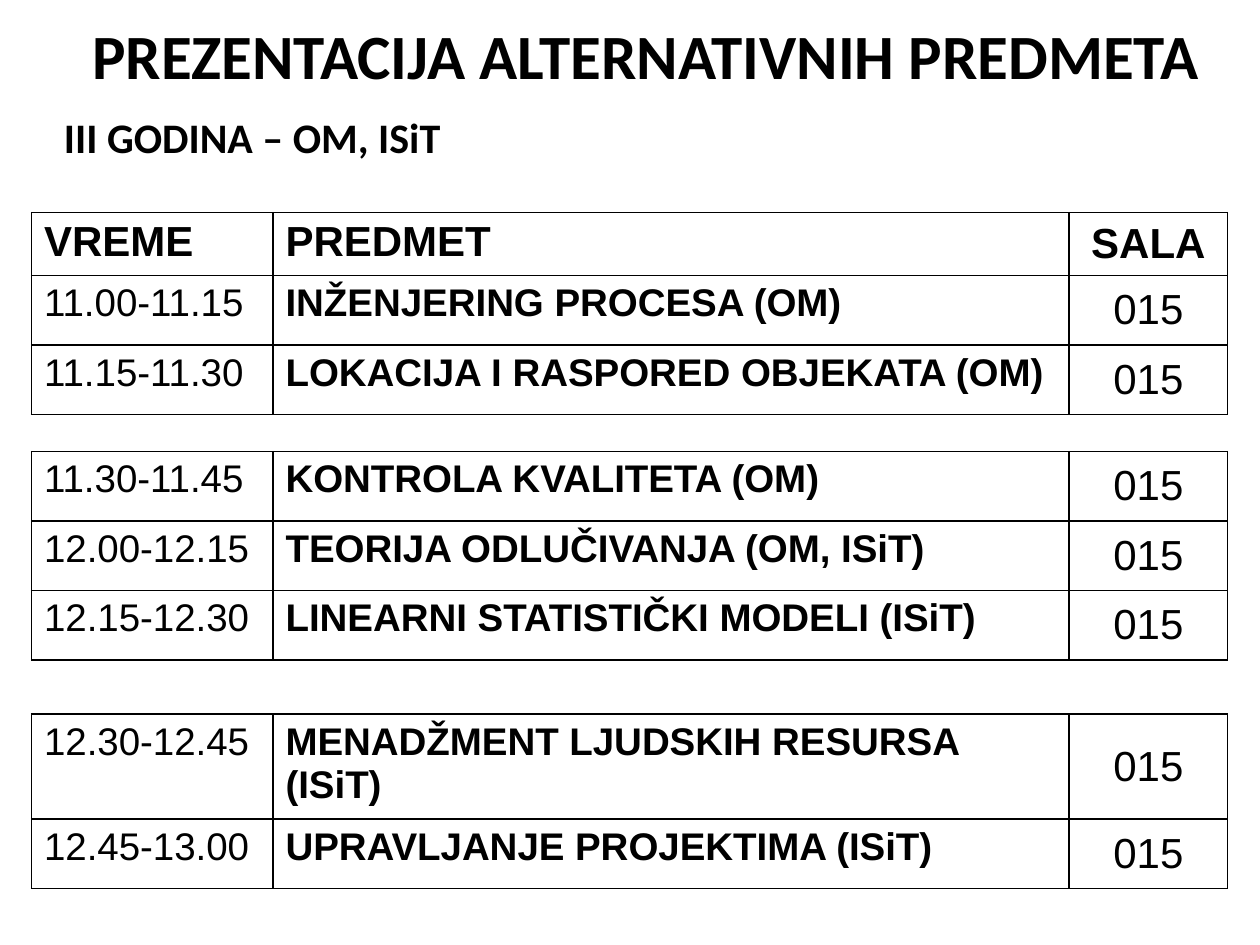
from dataclasses import dataclass

from lxml.etree import SubElement
from pptx import Presentation
from pptx.dml.color import RGBColor
from pptx.enum.text import MSO_ANCHOR, MSO_AUTO_SIZE, PP_ALIGN
from pptx.oxml.ns import qn
from pptx.util import Pt


@dataclass(frozen=True)
class Theme:
    ink: str = "000000"
    paper: str = "FFFFFF"
    heading_font: str = "Calibri"
    table_font: str = "Arial"
    title_size: float = 36
    large_size: float = 24
    entry_size: float = 22
    border_width: float = 1


class ScheduleSlide:
    def __init__(self, slide, theme):
        self.slide = slide
        self.theme = theme
        slide.background.fill.solid()
        slide.background.fill.fore_color.rgb = RGBColor.from_string(theme.paper)

    def set_text(self, frame, text, font_name, size, bold, align=PP_ALIGN.LEFT):
        frame.word_wrap = True
        paragraph = frame.paragraphs[0]
        paragraph.text = text
        paragraph.alignment = align
        font = paragraph.font
        font.name = font_name
        font.size = Pt(size)
        font.bold = bold
        font.color.rgb = RGBColor.from_string(self.theme.ink)

    def title(self, text, left, top, width, height):
        heading = self.slide.shapes.title
        heading.left, heading.top = Pt(left), Pt(top)
        heading.width, heading.height = Pt(width), Pt(height)
        frame = heading.text_frame
        frame.auto_size = MSO_AUTO_SIZE.NONE
        frame.vertical_anchor = MSO_ANCHOR.MIDDLE
        self.set_text(frame, text, self.theme.heading_font, self.theme.title_size,
                      True, PP_ALIGN.CENTER)

    def label(self, text, left, top, width, height):
        box = self.slide.shapes.add_textbox(Pt(left), Pt(top), Pt(width), Pt(height))
        self.set_text(box.text_frame, text, self.theme.heading_font,
                      self.theme.large_size, True)

    def border(self, cell):
        """Draw all four sides; they must precede the fill in the cell's XML."""
        properties = cell._tc.get_or_add_tcPr()
        for side in ("a:lnL", "a:lnR", "a:lnT", "a:lnB"):
            line = SubElement(properties, qn(side), w=str(Pt(self.theme.border_width)))
            fill = SubElement(line, qn("a:solidFill"))
            SubElement(fill, qn("a:srgbClr"), val=self.theme.ink)

    def table(self, entries, left, top, column_widths, row_heights, has_header=False):
        table = self.slide.shapes.add_table(
            len(entries), len(column_widths), Pt(left), Pt(top),
            Pt(sum(column_widths)), Pt(sum(row_heights))).table
        table.first_row = has_header
        table.horz_banding = False
        for column, width in zip(table.columns, column_widths):
            column.width = Pt(width)
        for row_index, (entry, height) in enumerate(zip(entries, row_heights)):
            table.rows[row_index].height = Pt(height)
            is_header = has_header and row_index == 0
            for column_index, text in enumerate(entry):
                is_subject, is_room = column_index == 1, column_index == 2
                cell = table.cell(row_index, column_index)
                self.border(cell)
                cell.fill.background()
                cell.vertical_anchor = MSO_ANCHOR.MIDDLE if is_room else MSO_ANCHOR.TOP
                size = (self.theme.large_size if is_header or is_room
                        else self.theme.entry_size)
                self.set_text(cell.text_frame, text, self.theme.table_font, size,
                              is_header or is_subject,
                              PP_ALIGN.CENTER if is_room else PP_ALIGN.LEFT)


HEADER = ("VREME", "PREDMET", "SALA")
ROOM = "015"
COLUMN_WIDTHS = (138, 455, 90.5)
HEADER_HEIGHT, ROW_HEIGHT, TWO_LINE_HEIGHT = 36, 39.7, 60

MORNING = [
    ("11.00-11.15", "INŽENJERING PROCESA (OM)", ROOM),
    ("11.15-11.30", "LOKACIJA I RASPORED OBJEKATA (OM)", ROOM),
]
MIDDAY = [
    ("11.30-11.45", "KONTROLA KVALITETA (OM)", ROOM),
    ("12.00-12.15", "TEORIJA ODLUČIVANJA (OM, ISiT)", ROOM),
    ("12.15-12.30", "LINEARNI STATISTIČKI MODELI (ISiT)", ROOM),
]
AFTERNOON = [
    ("12.30-12.45", "MENADŽMENT LJUDSKIH RESURSA (ISiT)", ROOM),
    ("12.45-13.00", "UPRAVLJANJE PROJEKTIMA (ISiT)", ROOM),
]


def main():
    presentation = Presentation()
    presentation.slide_width, presentation.slide_height = Pt(720), Pt(540)
    title_only = presentation.slide_layouts[5]
    schedule = ScheduleSlide(presentation.slides.add_slide(title_only), Theme())

    schedule.title("PREZENTACIJA ALTERNATIVNIH PREDMETA", 0, -30, 738, 122.5)
    schedule.label("III GODINA – OM, ISiT", 29.5, 60, 390, 65.5)

    left = 18
    schedule.table([HEADER] + MORNING, left, 121.5, COLUMN_WIDTHS,
                   [HEADER_HEIGHT] + [ROW_HEIGHT] * len(MORNING), has_header=True)
    schedule.table(MIDDAY, left, 258, COLUMN_WIDTHS, [ROW_HEIGHT] * len(MIDDAY))
    schedule.table(AFTERNOON, left, 408, COLUMN_WIDTHS, [TWO_LINE_HEIGHT, ROW_HEIGHT])

    presentation.save("out.pptx")


if __name__ == "__main__":
    main()
